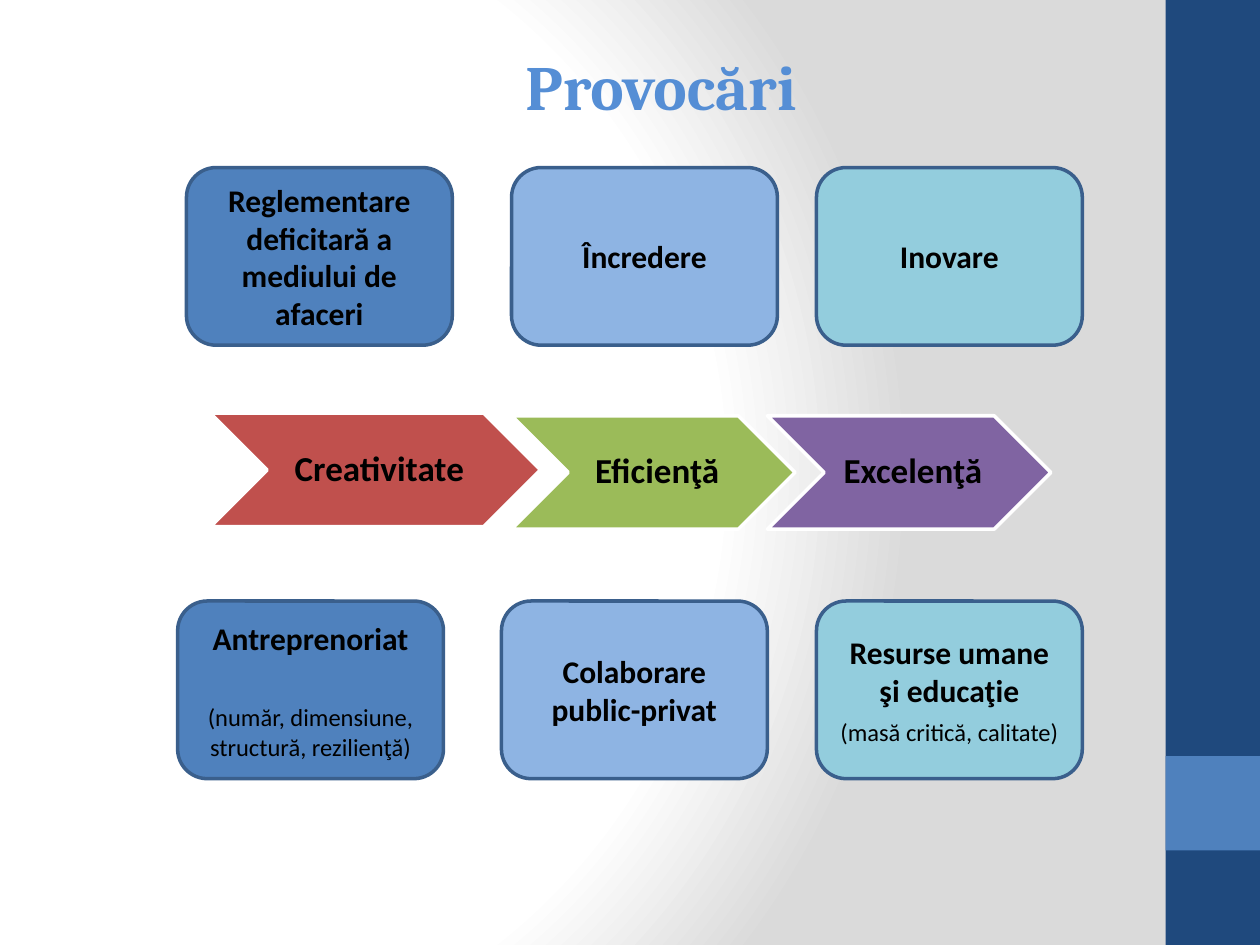
from pptx import Presentation
from pptx.dml.color import RGBColor
from pptx.enum.shapes import MSO_SHAPE as Shape
from pptx.enum.text import MSO_ANCHOR as Anchor, MSO_AUTO_SIZE as AutoSize, PP_ALIGN as Align
from pptx.oxml import parse_xml
from pptx.oxml.ns import nsdecls, qn
from pptx.util import Inches, Pt

NAVY = RGBColor(0x1F, 0x49, 0x7D)
BLUE = RGBColor(0x4F, 0x81, 0xBD)
LIGHT_BLUE = RGBColor(0x8E, 0xB4, 0xE3)
AQUA = RGBColor(0x93, 0xCD, 0xDD)
RED = RGBColor(0xC0, 0x50, 0x4D)
GREEN = RGBColor(0x9B, 0xBB, 0x59)
PURPLE = RGBColor(0x80, 0x64, 0xA2)
OUTLINE = RGBColor(0x3A, 0x5F, 0x8C)
TITLE_BLUE = RGBColor(0x55, 0x8E, 0xD5)
BLACK = RGBColor(0, 0, 0)
WHITE = RGBColor(0xFF, 0xFF, 0xFF)

COLUMNS, ROWS = 100, 75
CARD_COLS, CARD_ROWS = 21.1, 14.1
CHEVRON_ROWS = 9

# Each card: left column, fill, heading, detail, points between the two
TOP_CARDS = [
    (14.8, BLUE, "Reglementare deficitară a mediului de afaceri", None, 0),
    (40.6, LIGHT_BLUE, "Încredere", None, 0),
    (64.8, AQUA, "Inovare", None, 0),
]
BOTTOM_CARDS = [
    (14.1, BLUE, "Antreprenoriat", "(număr, dimensiune, structură, rezilienţă)", 26),
    (39.8, LIGHT_BLUE, "Colaborare public-privat", None, 0),
    (64.8, AQUA, "Resurse umane şi educaţie", "(masă critică, calitate)", 5),
]
# Each chevron: left column, top row, columns, fill, label
CHEVRONS = [
    (16.7, 32.8, 26.2, RED, "Creativitate"),
    (40.6, 33, 22.5, GREEN, "Eficienţă"),
    (60.9, 33, 22.5, PURPLE, "Excelenţă"),
]


class SlideBuilder:
    """Holds the deck's style and the current slide; lengths are grid columns and rows."""

    body_font = "Calibri"
    title_font = "Cambria"

    def __init__(self, deck):
        self.page = deck.slides.add_slide(deck.slide_layouts[5])
        self.cell_width = deck.slide_width / COLUMNS
        self.cell_height = deck.slide_height / ROWS

    def area(self, col, row, cols, rows):
        return (round(col * self.cell_width), round(row * self.cell_height),
                round(cols * self.cell_width), round(rows * self.cell_height))

    def background(self):
        """White glow from the left that fades to grey."""
        self.page.background.fill.gradient()
        old = self.page.element.find(".//" + qn("a:gradFill"))
        stops = "".join(
            f'<a:gs pos="{share * 1000}"><a:srgbClr val="{color}"/></a:gs>'
            for share, color in [(0, "FFFFFF"), (75, "FFFFFF"), (100, "DADADA")])
        old.getparent().replace(old, parse_xml(
            f'<a:gradFill {nsdecls("a")} rotWithShape="1"><a:gsLst>{stops}</a:gsLst>'
            '<a:path path="circle"><a:fillToRect l="20000" t="50000" r="100000" b="50000"/>'
            '</a:path></a:gradFill>'))

    def shape(self, kind, area, fill, line=None):
        shape = self.page.shapes.add_shape(kind, *self.area(*area))
        shape.shadow.inherit = False
        shape.fill.solid()
        shape.fill.fore_color.rgb = fill
        if line is None:
            shape.line.fill.background()
        else:
            shape.line.color.rgb = line
            shape.line.width = Pt(2)
        return shape

    def set_text(self, para, text, size, bold=True, color=BLACK, font=body_font):
        para.text = text
        para.alignment = Align.CENTER
        para.font.name = font
        para.font.size = Pt(size)
        para.font.bold = bold
        para.font.color.rgb = color

    def title(self, text, area):
        box = self.page.shapes.title
        box.left, box.top, box.width, box.height = self.area(*area)
        frame = box.text_frame
        frame.auto_size = AutoSize.NONE
        frame.vertical_anchor = Anchor.TOP
        self.set_text(frame.paragraphs[0], text, 36, color=TITLE_BLUE, font=self.title_font)

    def card(self, col, row, fill, heading, detail, gap):
        box = self.shape(Shape.ROUNDED_RECTANGLE, (col, row, CARD_COLS, CARD_ROWS), fill, OUTLINE)
        frame = box.text_frame
        frame.vertical_anchor = Anchor.MIDDLE
        self.set_text(frame.paragraphs[0], heading, 18)
        if detail:
            para = frame.add_paragraph()
            self.set_text(para, detail, 14, bold=False)
            para.space_before = Pt(gap)

    def chevron(self, col, row, cols, fill, label):
        arrow = self.shape(Shape.CHEVRON, (col, row, cols, CHEVRON_ROWS), fill, WHITE)
        frame = arrow.text_frame
        frame.vertical_anchor = Anchor.MIDDLE
        frame.margin_left = Inches(0.09)
        frame.margin_top = frame.margin_right = frame.margin_bottom = Inches(0.03)
        para = frame.paragraphs[0]
        self.set_text(para, label, 20)
        para.line_spacing = 0.9


def main():
    deck = Presentation()
    deck.slide_width, deck.slide_height = Inches(10), Inches(7.5)
    builder = SlideBuilder(deck)
    builder.background()
    builder.shape(Shape.RECTANGLE, (92.5, 0, 7.5, ROWS), NAVY)
    builder.shape(Shape.RECTANGLE, (92.5, 60, 7.5, 7.5), BLUE)
    for row, cards in [(13.3, TOP_CARDS), (47.7, BOTTOM_CARDS)]:
        for col, *content in cards:
            builder.card(col, row, *content)
    for chevron in CHEVRONS:
        builder.chevron(*chevron)
    builder.title("Provocări", (38.3, 3.3, 28.3, 13.1))
    deck.save("out.pptx")


if __name__ == "__main__":
    main()
